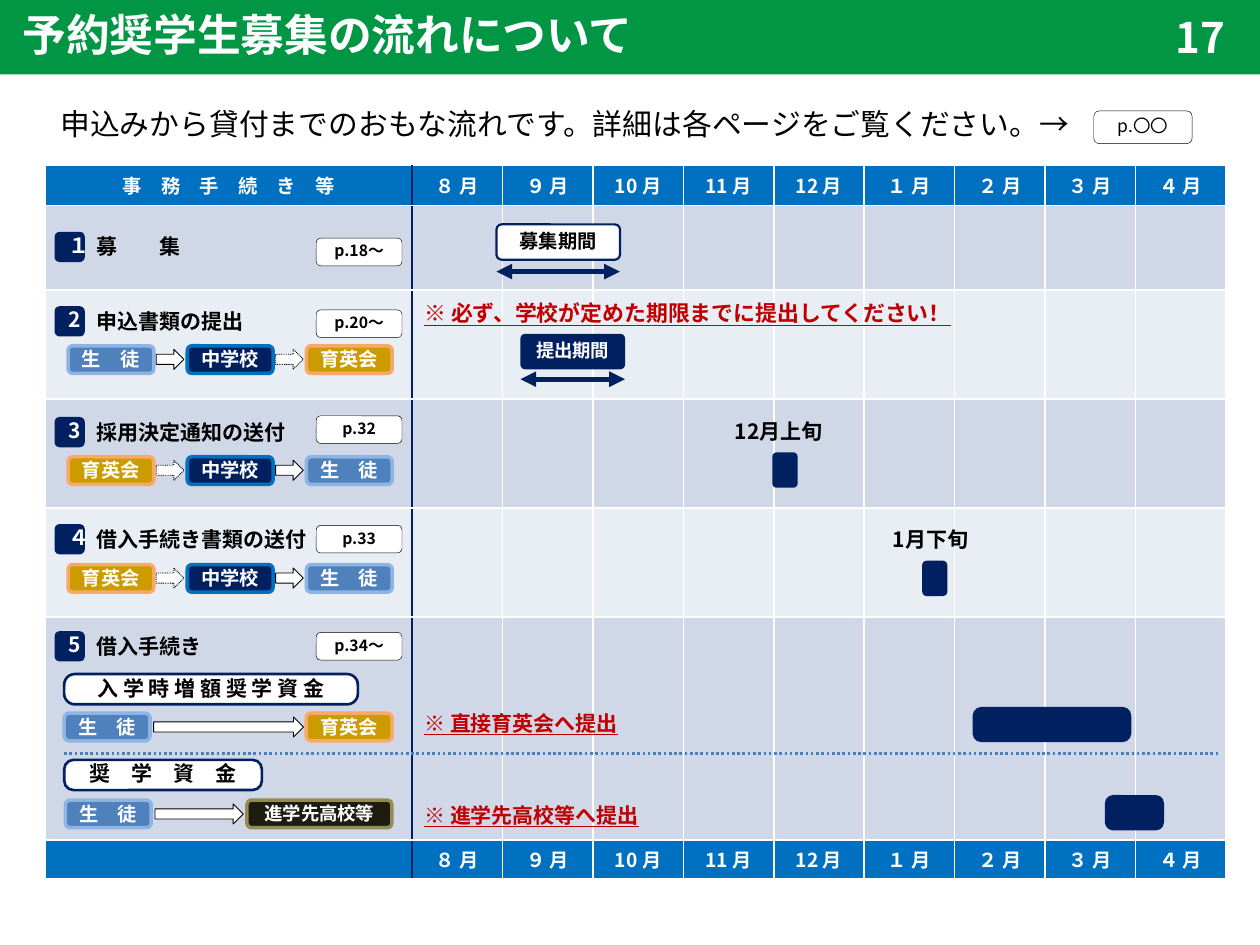
"""Build the slide that shows the scholarship application schedule."""
import lxml.etree
import pptx
import pptx.dml.color
import pptx.enum.dml
import pptx.enum.shapes
import pptx.enum.text
import pptx.oxml.ns
import pptx.util

Pt = pptx.util.Pt
qn = pptx.oxml.ns.qn
rgb = pptx.dml.color.RGBColor.from_string
SHAPE = pptx.enum.shapes.MSO_SHAPE
ALIGN = pptx.enum.text.PP_ALIGN
ANCHOR = pptx.enum.text.MSO_ANCHOR
DASH = pptx.enum.dml.MSO_LINE
FONT = "Noto Sans CJK JP"
NAVY, BLUE, GREEN, RED = "002060", "0070C0", "009644", "C00000"
WHITE, BLACK = "FFFFFF", "000000"


def write(frame, text, size, color, align=ALIGN.CENTER, bold=True, underline=False):
    frame.text = text
    para = frame.paragraphs[0]
    para.alignment = align
    for span in para.runs:
        span.font.size = Pt(size)
        span.font.bold = bold
        if underline:
            span.font.underline = True
        span.font.color.rgb = rgb(color)
        span.font.name = FONT
        lxml.etree.SubElement(span.font._element, qn("a:ea"), typeface=FONT)


def add_box(left, top, width, height, text="", size=12, color=BLACK, fill=None,
            line=None, weight=1, kind=SHAPE.ROUNDED_RECTANGLE, adj=None, inset=2, **style):
    place = Pt(left), Pt(top), Pt(width), Pt(height)
    if fill:
        box = page.shapes.add_shape(kind, *place)
        box.shadow.inherit = False
        box.fill.solid()
        box.fill.fore_color.rgb = rgb(fill)
        if line:
            box.line.color.rgb = rgb(line)
            box.line.width = Pt(weight)
        else:
            box.line.fill.background()
        if adj:
            box.adjustments[0] = adj
    else:
        box = page.shapes.add_textbox(*place)
    if text:
        frame = box.text_frame
        frame.word_wrap = True
        frame.vertical_anchor = ANCHOR.MIDDLE
        frame.margin_top, frame.margin_bottom = Pt(inset), Pt(3.6)
        write(frame, text, size, color, **style)
    return box


deck = pptx.Presentation()
deck.slide_width, deck.slide_height = Pt(720), Pt(540)
page = deck.slides.add_slide(deck.slide_layouts[6])

banner = add_box(0, 0, 720, 42.5, "予約奨学生募集の流れについて", 25, WHITE, GREEN,
                 kind=SHAPE.RECTANGLE, inset=0, align=ALIGN.LEFT)
banner.text_frame.margin_left = Pt(12.8)
add_box(654.5, 3, 62.6, 36, "17", 24, WHITE, GREEN, kind=SHAPE.RECTANGLE, inset=3.6)

months = ["８ 月", "９ 月", "10 月", "11 月", "12 月", "１ 月", "２ 月", "３ 月", "４ 月"]
heights = [22.9, 48.3, 62.3, 62.3, 62.3, 127.4, 22.5]
widths = [209.5] + [51.7] * len(months)
fills = [BLUE, "D0D8E8", "E9EDF4", "D0D8E8", "E9EDF4", "D0D8E8", BLUE]
schedule = page.shapes.add_table(len(heights), len(widths), Pt(26), Pt(94.5),
                                 Pt(sum(widths)), Pt(sum(heights))).table
for column, width in zip(schedule.columns, widths):
    column.width = Pt(width)
for r, height in enumerate(heights):
    schedule.rows[r].height = Pt(height)
    labels = [""] * len(widths)
    if fills[r] == BLUE:
        labels = ["" if r else "事　務　手　続　き　等"] + months
    for c, label in enumerate(labels):
        cell = schedule.cell(r, c)
        cell.margin_top = cell.margin_bottom = 0
        cell.vertical_anchor = ANCHOR.MIDDLE
        if label:
            write(cell.text_frame, label, 11, WHITE)
        else:
            lxml.etree.SubElement(cell.text_frame.paragraphs[0]._p, qn("a:endParaRPr"), sz="1100")
        for side in "LRTB":
            border = lxml.etree.SubElement(cell._tc.get_or_add_tcPr(), qn("a:ln" + side), w="12700")
            paint = lxml.etree.SubElement(border, qn("a:solidFill"))
            edge = NAVY if (c, side) in [(0, "R"), (1, "L")] else WHITE
            lxml.etree.SubElement(paint, qn("a:srgbClr"), val=edge)
        cell.fill.solid()
        cell.fill.fore_color.rgb = rgb(fills[r])

add_box(27.4, 56.9, 661.7, 32, "申込みから貸付までのおもな流れです。詳細は各ページをご覧ください。→",
        17, inset=3.6, bold=False, align=ALIGN.LEFT).text_frame.vertical_anchor = ANCHOR.TOP
add_box(625, 63.4, 56.2, 18.7, "p.〇〇", 10, fill=WHITE, line=BLACK, weight=0.25, bold=False)

steps = [("１", "募　　集", "p.18～", 132.5, 136.1),
         ("2", "申込書類の提出", "p.20～", 175, 177.1),
         ("3", "採用決定通知の送付", "p.32", 238.3, 237.6),
         ("４", "借入手続き書類の送付", "p.33", 299.5, 300.2),
         ("5", "借入手続き", "p.34～", 360.7, 361.4)]
for number, title, reference, top, reference_top in steps:
    add_box(31.2, top, 17.3, 17.3, number, 12, WHITE, NAVY, inset=1.4)
    add_box(48.2, top - 1.8, 141.8, 18, title, inset=5.8, align=ALIGN.LEFT)
    add_box(180.7, reference_top, 49, 15.8, reference, 9, fill=WHITE, line=BLACK, weight=0.25)

student = ("生　徒", "4F81BD", "8EB4E3")
school = ("中学校", NAVY, BLUE)
society = ("育英会", "CC9B00", "F9A967")
high_school = ("進学先高校等", "1E1C11", "948A54")
chips = []
arrows = [(87.8, 409.7, 85.7, False), (88.6, 459.4, 50.4, False)]
for top, route in [(197.6, (student, school, society)),
                   (261, (society, school, student)),
                   (322.6, (society, school, student))]:
    for i, party in enumerate(route):
        chips.append((38.9 + 68.1 * i, top, 49, 11, party))
    for i in range(2):
        arrows.append((89.3 + 68.2 * i, top + 2, 15.8, society in route[i:i + 2]))
chips += [(36.7, 407.5, 49, 11, student), (175, 407.5, 49, 11, society),
          (37.4, 457.2, 49, 11, student), (141.1, 457.2, 82.8, 10.5, high_school)]
for left, top, width, size, (name, fill, line) in chips:
    add_box(left, top, width, 15.8, name, size, WHITE, fill, line, 2, inset=2.9)
for left, top, width, dotted in arrows:
    arrow = add_box(left, top, width, 11.5, fill=WHITE, line=BLACK, weight=0.5,
                    kind=SHAPE.RIGHT_ARROW)
    if dotted:
        arrow.line.dash_style = DASH.ROUND_DOT

add_box(36.7, 385.2, 167.8, 17.3, "入 学 時 増 額 奨 学 資 金", fill=WHITE, line=NAVY,
        weight=1.5, adj=0.35)
add_box(36.7, 434.2, 113, 17.3, "奨　学　資　金", fill=WHITE, line=NAVY, weight=1.5, adj=0.31)

add_box(283.7, 128.2, 70.6, 20.2, "募集期間", 11, fill=WHITE, line=NAVY, weight=1.25, adj=0.15)
add_box(297.4, 190.8, 59.8, 20.2, "提出期間", 10.5, WHITE, NAVY, adj=0.13)
for left, top, width, adj in [(441.4, 258.5, 14.4, 0.16), (527, 320.4, 14.4, 0.18),
                              (555.8, 403.9, 90.7, 0.25), (631.4, 454.3, 33.8, 0.23)]:
    add_box(left, top, width, 20.2, fill=NAVY, adj=adj)

add_box(405.4, 230.4, 79.2, 29.5, "12月上旬", inset=5.8)
add_box(490.3, 293, 82.8, 28.1, "1月下旬", inset=5.8)
for top, width, height, size, notice in [
        (159.8, 327.6, 36, 12.5, "※ 必ず、学校が定めた期限までに提出してください！"),
        (400.3, 167.8, 23.8, 12, "※ 直接育英会へ提出"),
        (450.7, 167.8, 28.1, 12, "※ 進学先高校等へ提出")]:
    add_box(235.4, top, width, height, notice, size, RED, inset=5.8,
            align=ALIGN.LEFT, underline=True)

for left, right, y, color, weight in [(283.7, 354.2, 155.2, NAVY, 3),
                                      (297.4, 357.1, 216.7, NAVY, 3),
                                      (36.7, 697, 430.6, "4B7EBC", 1.5)]:
    rule = page.shapes.add_connector(pptx.enum.shapes.MSO_CONNECTOR.STRAIGHT,
                                     Pt(left), Pt(y), Pt(right), Pt(y))
    rule.line.color.rgb = rgb(color)
    rule.line.width = Pt(weight)
    if color == NAVY:
        for end in ("a:headEnd", "a:tailEnd"):
            lxml.etree.SubElement(rule.line._get_or_add_ln(), qn(end), type="triangle")
    else:
        rule.line.dash_style = DASH.ROUND_DOT
    lxml.etree.SubElement(rule._element.spPr, qn("a:effectLst"))

deck.save("out.pptx")
